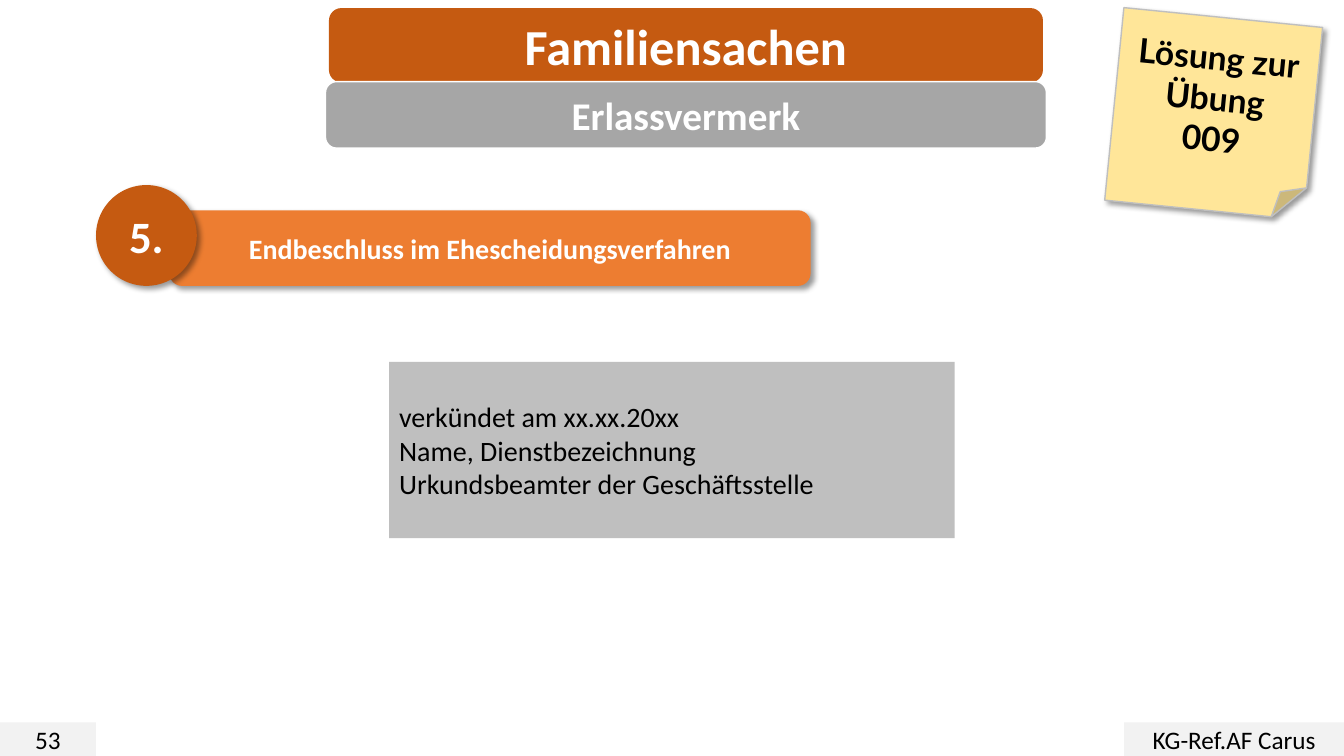
"""Build the solution slide for the pronouncement note in family matters."""
from lxml.etree import SubElement
from pptx import Presentation
from pptx.dml.color import RGBColor
from pptx.enum.shapes import MSO_SHAPE
from pptx.enum.text import MSO_ANCHOR, PP_ALIGN
from pptx.oxml.ns import qn
from pptx.util import Pt

TITLE = ["Familiensachen"]
SUBTITLE = ["Erlassvermerk"]
STICKY_NOTE = ["Lösung zur", "Übung", "009"]
NUMBER = ["5."]
HEADING = ["Endbeschluss im Ehescheidungsverfahren"]
NOTICE = [
    "verkündet am xx.xx.20xx",
    "Name, Dienstbezeichnung",
    "Urkundsbeamter der Geschäftsstelle",
]
PAGE = ["53"]
AUTHOR = ["KG-Ref.AF Carus"]

THEME = {
    "font": "Calibri", "note_font": "Lato",
    "white": "FFFFFF", "black": "000000",
    "rust": "C55A11", "orange": "ED7D31", "yellow": "FFE699",
    "gray": "A6A6A6", "silver": "BFBFBF", "pale": "F2F2F2",
    "title": 36, "number": 32, "subtitle": 28, "note": 24, "body": 20, "footer": 18,
}
SLIDE_W, SLIDE_H = 960, 540
HEADER_MID = 490
FOOTER_H = 24
BADGE = 72
BADGE_X, BADGE_Y = 68.6, 132.2
BAR_H = 54


def rgb(name):
    """Return a theme colour."""
    return RGBColor.from_string(THEME[name])


def add_shadow(sp):
    """Give a shape a soft shadow to the lower right."""
    effects = sp._element.spPr.find(qn("a:effectLst"))
    shadow = SubElement(effects, qn("a:outerShdw"), blurRad=str(Pt(4)),
                        dist=str(Pt(3)), dir="2700000", algn="tl", rotWithShape="0")
    color = SubElement(shadow, qn("a:srgbClr"), val=THEME["black"])
    SubElement(color, qn("a:alpha"), val="40000")


def add_box(s, lines, box, *, fill, size, kind=MSO_SHAPE.RECTANGLE, color="black",
            bold=False, font="font", align=PP_ALIGN.CENTER, line=None,
            shadow=False, rotation=0):
    """Add a filled shape with one paragraph per line of text."""
    sp = s.shapes.add_shape(kind, *(Pt(v) for v in box))
    sp.rotation = rotation
    sp.fill.solid()
    sp.fill.fore_color.rgb = rgb(fill)
    if line:
        sp.line.color.rgb = rgb(line)
        sp.line.width = Pt(1)
    else:
        sp.line.fill.background()
    sp.shadow.inherit = False
    if shadow:
        add_shadow(sp)
    tf = sp.text_frame
    tf.word_wrap = True
    tf.vertical_anchor = MSO_ANCHOR.MIDDLE
    for i, text in enumerate(lines):
        p = tf.paragraphs[0] if i == 0 else tf.add_paragraph()
        p.alignment = align
        r = p.add_run()
        r.text = text
        r.font.name = THEME[font]
        r.font.size = Pt(THEME[size])
        r.font.bold = bold
        r.font.color.rgb = rgb(color)
    return sp


def centered(width, top, height):
    """Return a header box centred on the header axis."""
    return HEADER_MID - width / 2, top, width, height


def main():
    """Build and save the slide."""
    prs = Presentation()
    prs.slide_width, prs.slide_height = Pt(SLIDE_W), Pt(SLIDE_H)
    s = prs.slides.add_slide(prs.slide_layouts[6])
    rounded = {"kind": MSO_SHAPE.ROUNDED_RECTANGLE, "color": "white", "bold": True}

    add_box(s, TITLE, centered(510, 5.8, 53), fill="rust", size="title", **rounded)
    for lines, left, width in ((PAGE, 0, 68.6), (AUTHOR, SLIDE_W - 157, 157)):
        add_box(s, lines, (left, SLIDE_H - FOOTER_H, width, FOOTER_H),
                fill="pale", size="footer")
    add_box(s, SUBTITLE, centered(515, 58.3, 47.5), fill="gray", size="subtitle",
            line="white", **rounded)
    add_box(s, STICKY_NOTE, (795.6, 12.2, 142.6, 138.2), fill="yellow", size="note",
            kind=MSO_SHAPE.FOLDED_CORNER, font="note_font", bold=True,
            line="silver", shadow=True, rotation=5.7)
    add_box(s, HEADING, (BADGE_X + 52.4, BADGE_Y + BADGE - BAR_H, 458, BAR_H),
            fill="orange", size="body", shadow=True, **rounded)
    add_box(s, NUMBER, (BADGE_X, BADGE_Y, BADGE, BADGE), fill="rust", size="number",
            kind=MSO_SHAPE.OVAL, color="white", bold=True, shadow=True)
    add_box(s, NOTICE, (278, 258.5, 404, 126), fill="silver", size="body",
            align=PP_ALIGN.LEFT)
    prs.save("out.pptx")


if __name__ == "__main__":
    main()
